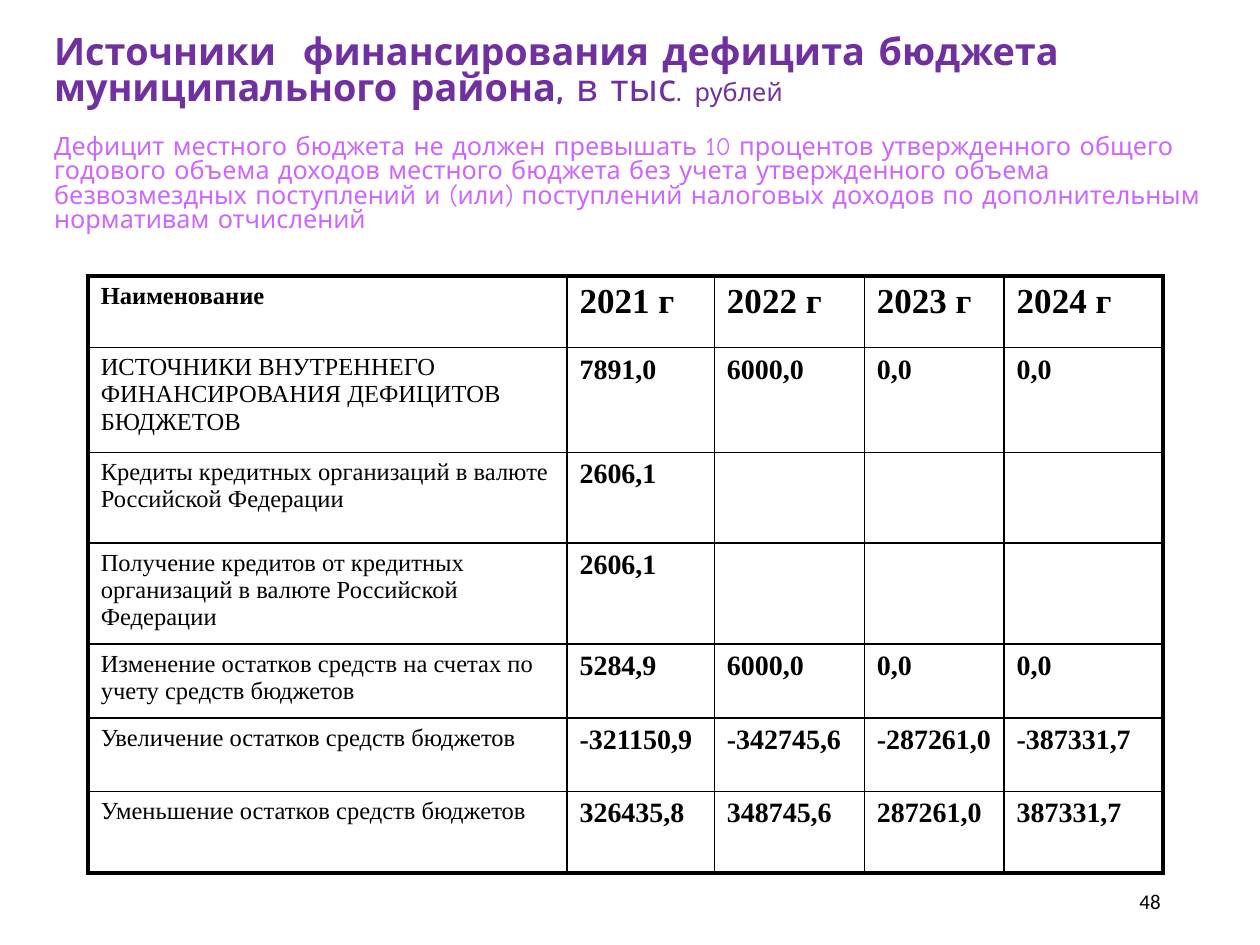
from lxml import etree
from pptx import Presentation
from pptx.dml.color import RGBColor
from pptx.enum.text import MSO_ANCHOR, MSO_AUTO_SIZE, PP_ALIGN
from pptx.oxml.ns import qn
from pptx.util import Inches, Pt

MIDDLE, NO_FIT = MSO_ANCHOR.MIDDLE, MSO_AUTO_SIZE.NONE
LEFT, RIGHT = PP_ALIGN.LEFT, PP_ALIGN.RIGHT

THEME = {
    "title_font": "Comic Neue", "table_font": "Times New Roman", "number_font": "Calibri",
    "heading": "7030A0", "note": "CC66FF", "ink": "000000",
    "heading_size": 21.6, "note_size": 14.4,
    "label_size": 14, "year_size": 20, "value_size": 16, "number_size": 12,
    "inner_line": 1, "outer_line": 2.25,
}

# Content
HEADING_LINES = ["Источники  финансирования дефицита бюджета", "муниципального района,"]
UNIT_LARGE, UNIT_SMALL = " в тыс. ", "рублей"
NOTE = ("Дефицит местного бюджета не должен превышать 10 процентов утвержденного общего "
        "годового объема доходов местного бюджета без учета утвержденного объема "
        "безвозмездных поступлений и (или) поступлений налоговых доходов по "
        "дополнительным нормативам отчислений")
PAGE_NUMBER = "48"
ROWS = [
    ("Наименование", "2021 г", "2022 г", "2023 г", "2024 г"),
    ("ИСТОЧНИКИ ВНУТРЕННЕГО ФИНАНСИРОВАНИЯ ДЕФИЦИТОВ БЮДЖЕТОВ",
     "7891,0", "6000,0", "0,0", "0,0"),
    ("Кредиты кредитных организаций в валюте Российской Федерации", "2606,1", "", "", ""),
    ("Получение кредитов от кредитных организаций в валюте Российской Федерации",
     "2606,1", "", "", ""),
    ("Изменение остатков средств на счетах по учету средств бюджетов",
     "5284,9", "6000,0", "0,0", "0,0"),
    ("Увеличение остатков средств бюджетов",
     "-321150,9", "-342745,6", "-287261,0", "-387331,7"),
    ("Уменьшение остатков средств бюджетов",
     "326435,8", "348745,6", "287261,0", "387331,7"),
]
COLUMN_WIDTHS = [3.8, 1.17, 1.19, 1.11, 1.26]
ROW_HEIGHTS = [0.57, 0.83, 0.72, 0.74, 0.59, 0.58, 0.65]


def style(span, font, size, color, bold=False):
    span.font.name = THEME[font]
    span.font.size = Pt(THEME[size])
    span.font.color.rgb = RGBColor.from_string(THEME[color])
    span.font.bold = bold


def add_span(para, text, size, color, bold=False):
    span = para.add_run()
    span.text = text
    style(span, "title_font", size, color, bold)


def set_borders(cell, widths):
    """Draw left, right, top and bottom lines, given in that order."""
    properties = cell._tc.get_or_add_tcPr()
    for index, (side, width) in enumerate(zip("LRTB", widths)):
        line = etree.Element(qn(f"a:ln{side}"), w=str(Pt(width)))
        fill = etree.SubElement(line, qn("a:solidFill"))
        etree.SubElement(fill, qn("a:srgbClr"), val=THEME["ink"])
        properties.insert(index, line)


def add_title(page):
    title = page.shapes.title
    title.left, title.top = Inches(0.33), Inches(0.5)
    title.width, title.height = Inches(9.5), Inches(1.14)
    frame = title.text_frame
    frame.word_wrap, frame.auto_size, frame.vertical_anchor = True, NO_FIT, MIDDLE
    heading, note = frame.paragraphs[0], frame.add_paragraph()
    add_span(heading, HEADING_LINES[0], "heading_size", "heading", True)
    heading.add_line_break()
    add_span(heading, HEADING_LINES[1], "heading_size", "heading", True)
    add_span(heading, UNIT_LARGE, "heading_size", "heading")
    add_span(heading, UNIT_SMALL, "note_size", "heading")
    add_span(note, NOTE, "note_size", "note")
    for para in (heading, note):
        para.alignment, para.line_spacing = LEFT, 0.8
    note.space_before = Pt(15.7)


def add_budget_table(page):
    table = page.shapes.add_table(
        len(ROWS), len(COLUMN_WIDTHS), Inches(0.7), Inches(2.19),
        Inches(sum(COLUMN_WIDTHS)), Inches(sum(ROW_HEIGHTS))).table
    for column, width in zip(table.columns, COLUMN_WIDTHS):
        column.width = Inches(width)
    for row, height in zip(table.rows, ROW_HEIGHTS):
        row.height = Inches(height)
    last_row, last_column = len(ROWS) - 1, len(COLUMN_WIDTHS) - 1
    for r, values in enumerate(ROWS):
        for c, value in enumerate(values):
            cell = table.cell(r, c)
            cell.fill.background()
            on_edge = (c == 0, c == last_column, r == 0, r == last_row)
            set_borders(cell, [THEME["outer_line" if edge else "inner_line"]
                               for edge in on_edge])
            cell.text_frame.text = value
            size = "label_size" if c == 0 else "year_size" if r == 0 else "value_size"
            for span in cell.text_frame.paragraphs[0].runs:
                style(span, "table_font", size, "ink", bold=r == 0 or c > 0)


def add_page_number(page):
    box = page.shapes.add_textbox(Inches(7.06), Inches(6.95), Inches(2.25), Inches(0.4))
    frame = box.text_frame
    frame.word_wrap, frame.vertical_anchor = True, MIDDLE
    frame.text = PAGE_NUMBER
    para = frame.paragraphs[0]
    para.alignment = RIGHT
    style(para.runs[0], "number_font", "number_size", "ink")


def main():
    deck = Presentation()
    deck.slide_width, deck.slide_height = Inches(10), Inches(7.5)
    page = deck.slides.add_slide(deck.slide_layouts[5])
    add_title(page)
    add_page_number(page)
    add_budget_table(page)
    deck.save("out.pptx")


if __name__ == "__main__":
    main()
